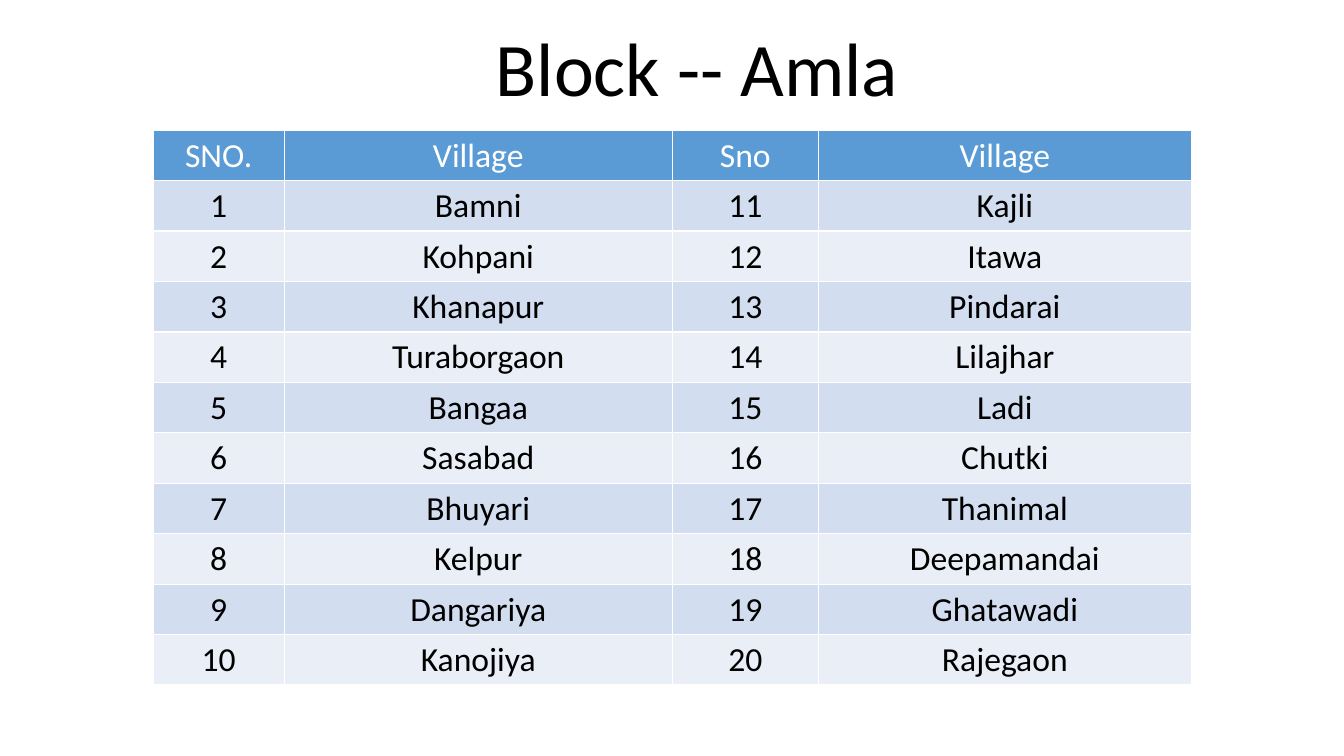
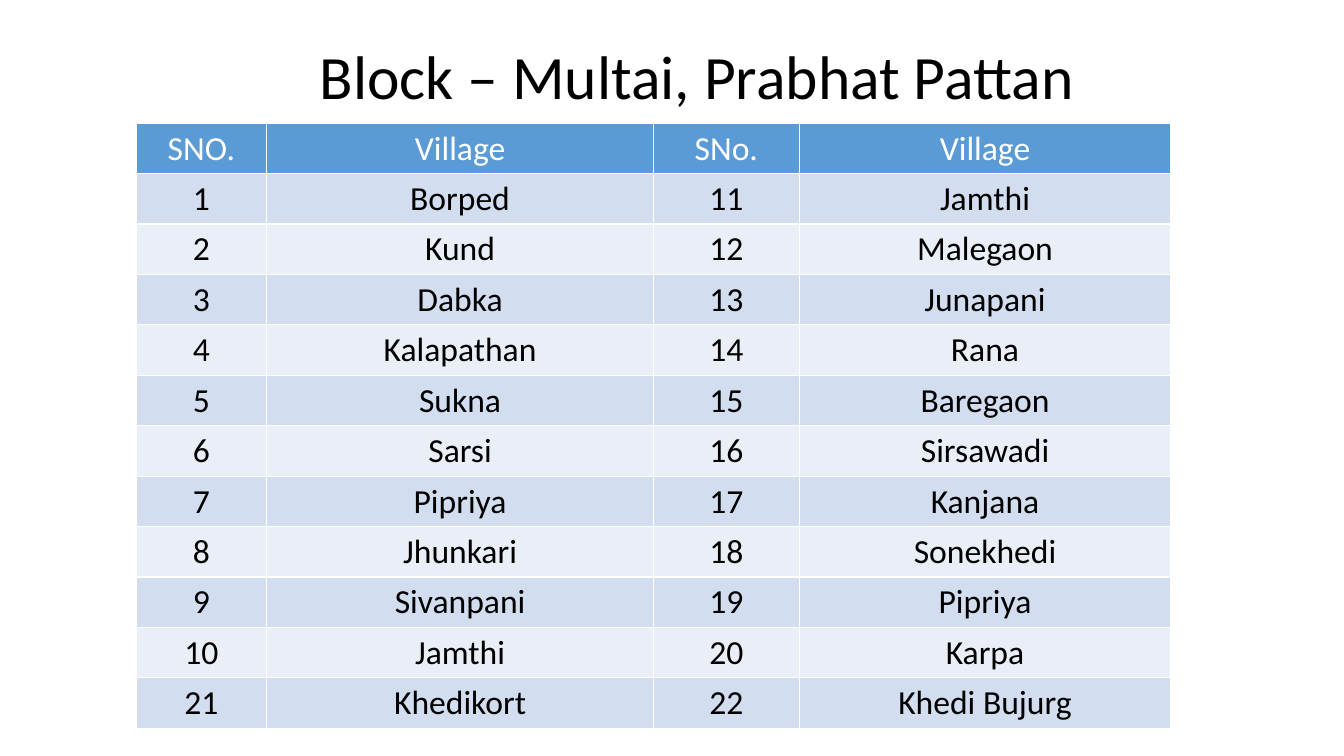
import pptx
import pptx.dml.color
import pptx.enum.text
import pptx.util

RGB = pptx.dml.color.RGBColor
BLUE = RGB(0x5B, 0x9B, 0xD5)
BANDS = (RGB(0xEA, 0xEF, 0xF7), RGB(0xD2, 0xDE, 0xEF))
BLACK = RGB(0, 0, 0)
WHITE = RGB(0xFF, 0xFF, 0xFF)
FONT = "Calibri"
COLS, ROWS = 40, 18
SPLIT = (1.3, 3.85, 1.45, 3.7)
STEP = 1.2
HALF = 10

AMLA = [
    "Bamni", "Kohpani", "Khanapur", "Turaborgaon", "Bangaa",
    "Sasabad", "Bhuyari", "Kelpur", "Dangariya", "Kanojiya",
    "Kajli", "Itawa", "Pindarai", "Lilajhar", "Ladi",
    "Chutki", "Thanimal", "Deepamandai", "Ghatawadi", "Rajegaon",
]
MULTAI = [
    "Borped", "Kund", "Dabka", "Kalapathan", "Sukna",
    "Sarsi", "Pipriya", "Jhunkari", "Sivanpani", "Jamthi",
    "Jamthi", "Malegaon", "Junapani", "Rana", "Baregaon",
    "Sirsawadi", "Kanjana", "Sonekhedi", "Pipriya", "Karpa",
    "Khedikort", "Khedi Bujurg",
]


def pair(names):
    items = list(enumerate(names, 1))
    left = items[:HALF] + items[2 * HALF::2]
    right = items[HALF:2 * HALF] + items[2 * HALF + 1::2]
    return [a + b for a, b in zip(left, right)]


class Deck:
    def __init__(self):
        self.show = pptx.Presentation()
        self.show.slide_width = pptx.util.Inches(13.333)
        self.show.slide_height = pptx.util.Inches(7.5)
        self.slide = None

    def x(self, cols):
        return round(self.show.slide_width * cols / COLS)

    def y(self, rows):
        return round(self.show.slide_height * rows / ROWS)

    def page(self):
        self.slide = self.show.slides.add_slide(self.show.slide_layouts[6])

    def label(self, frame, text, size, color):
        frame.text = str(text)
        para = frame.paragraphs[0]
        para.alignment = pptx.enum.text.PP_ALIGN.CENTER
        font = para.runs[0].font
        font.name = FONT
        font.size = pptx.util.Pt(size)
        font.bold = False
        font.color.rgb = color
        return para

    def title(self, text, size):
        box = self.slide.shapes.add_textbox(
            self.x(8), self.y(1), self.x(25.5), self.y(1.8))
        frame = box.text_frame
        frame.word_wrap = True
        frame.vertical_anchor = pptx.enum.text.MSO_ANCHOR.BOTTOM
        self.label(frame, text, size, BLACK).line_spacing = 0.9

    def table(self, left, top, width, head, body):
        data = [head] + body
        table = self.slide.shapes.add_table(
            len(data), len(head), self.x(left), self.y(top),
            self.x(width), self.y(STEP * len(data))).table
        for col, part in zip(table.columns, SPLIT):
            col.width = self.x(width * part / sum(SPLIT))
        for r, line in enumerate(data):
            table.rows[r].height = self.y(STEP)
            for c, text in enumerate(line):
                cell = table.cell(r, c)
                cell.fill.solid()
                cell.fill.fore_color.rgb = BANDS[r % 2] if r else BLUE
                self.label(cell.text_frame, text, 24, BLACK if r else WHITE)


def main():
    deck = Deck()
    deck.page()
    deck.title("Block -- Amla", 54)
    deck.table(4.56, 3.1, 30.9,
               ("SNO.", "Village", "Sno", "Village"), pair(AMLA))
    deck.page()
    deck.title("Block – Multai, Prabhat Pattan", 44)
    deck.table(4.05, 2.93, 30.8,
               ("SNO.", "Village", "SNo.", "Village"), pair(MULTAI))
    deck.show.save("out.pptx")


if __name__ == "__main__":
    main()
